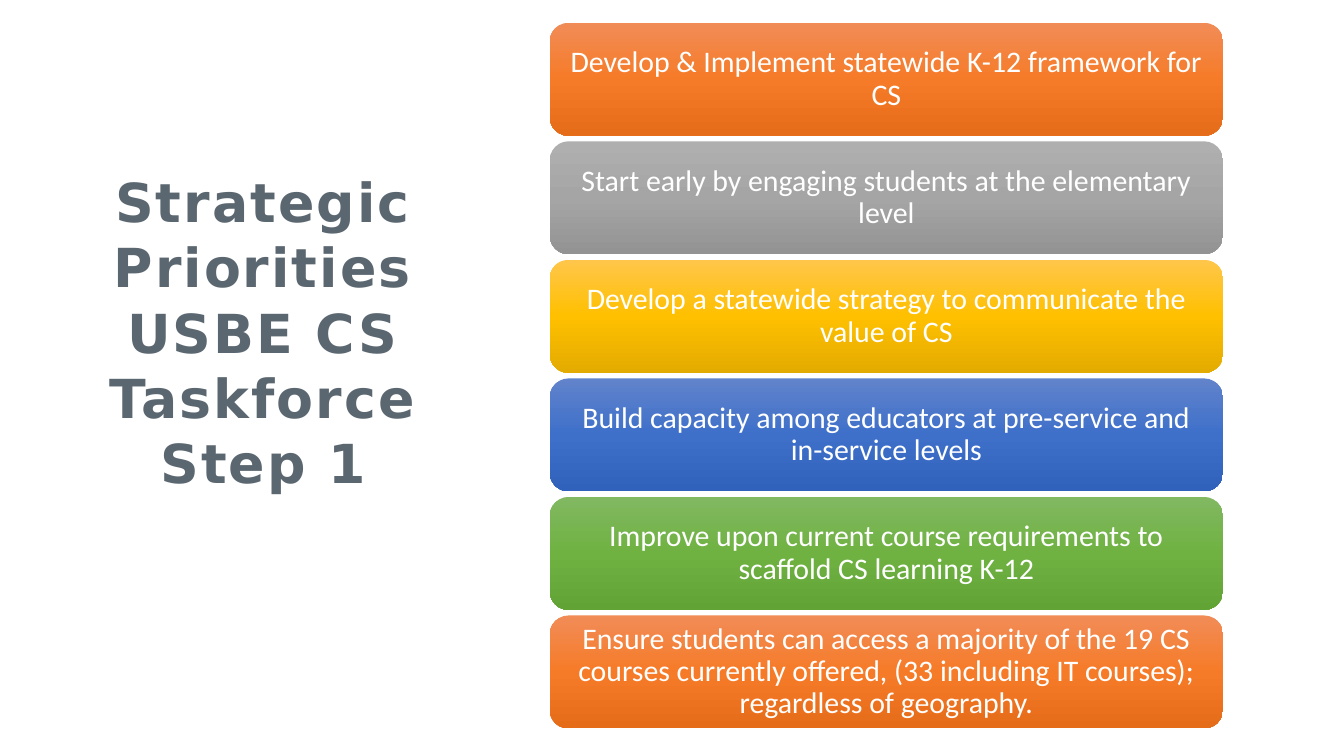
from copy import deepcopy
from pptx import Presentation, util as u
from pptx.dml.color import RGBColor
from pptx.enum import shapes, text
from pptx.oxml.ns import qn

WIDE = 10
HIGH = WIDE * 9 / 16
LEFT, TOP, LAST, WIDTH, HEIGHT = 4.09, 0.17, 4.58, 5.01, 0.84
INK = {"title": "5B6770", "text": "FFFFFF"}
RAMP = {
    "orange": ("F18C57", "F67B28", "E56C19"),
    "gray": ("AFAFAF", "A5A5A5", "939393"),
    "gold": ("FFC64B", "FFC000", "E3AB00"),
    "blue": ("6183CB", "3E70CA", "3062BB"),
    "green": ("81B861", "6FB242", "62A336"),
}
GOALS = [
    ("orange", "Develop & Implement statewide K-12 framework for CS"),
    ("gray", "Start early by engaging students at the elementary level"),
    ("gold", "Develop a statewide strategy to communicate the value of CS"),
    ("blue", "Build capacity among educators at pre-service and in-service levels"),
    ("green", "Improve upon current course requirements to scaffold CS learning K-12"),
    ("orange", "Ensure students can access a majority of the 19 CS courses currently "
               "offered, (33 including IT courses); regardless of geography."),
]
PITCH = (LAST - TOP) / (len(GOALS) - 1)


def style(para, face, size, color, bold=False):
    para.alignment = text.PP_ALIGN.CENTER
    for run in para.runs:
        font = run.font
        font.name, font.size, font.bold = face, u.Pt(size), bold
        font.color.rgb = RGBColor.from_string(color)


def shade(shape, ramp):
    fill = shape.fill
    fill.gradient()
    fill.gradient_angle = 270
    stops = next(shape._element.spPr.iter(qn("a:gsLst")))
    stops.insert(1, deepcopy(stops[0]))
    for stop, color, place in zip(fill.gradient_stops, ramp, (0, 0.5, 1)):
        stop.color.rgb = RGBColor.from_string(color)
        stop.position = place


def head(slide):
    title = slide.shapes.title
    title.left, title.top = u.Inches(0.25), u.Inches(1.4)
    title.width, title.height = u.Inches(3.42), u.Inches(2.33)
    frame = title.text_frame
    frame.text = "Strategic Priorities USBE CS Taskforce\vStep 1"
    frame.word_wrap = True
    frame.auto_size = text.MSO_AUTO_SIZE.NONE
    frame.vertical_anchor = text.MSO_ANCHOR.BOTTOM
    para = frame.paragraphs[0]
    para.line_spacing = u.Pt(35)
    style(para, "DejaVu Sans", 28.8, INK["title"], True)
    for run in para.runs:
        run.font._element.set("spc", "110")


def goal(slide, row, hue, words):
    card = slide.shapes.add_shape(
        shapes.MSO_SHAPE.ROUNDED_RECTANGLE, u.Inches(LEFT),
        u.Inches(TOP + row * PITCH), u.Inches(WIDTH), u.Inches(HEIGHT))
    card.shadow.inherit = False
    card.line.fill.background()
    shade(card, RAMP[hue])
    frame = card.text_frame
    frame.text = words
    frame.word_wrap = True
    frame.vertical_anchor = text.MSO_ANCHOR.MIDDLE
    frame.margin_left = frame.margin_right = u.Inches(0.07)
    frame.margin_top = frame.margin_bottom = u.Inches(0.03)
    para = frame.paragraphs[0]
    para.line_spacing = 0.9
    style(para, "Calibri", 16, INK["text"])


def main():
    deck = Presentation()
    deck.slide_width, deck.slide_height = u.Inches(WIDE), u.Inches(HIGH)
    slide = deck.slides.add_slide(deck.slide_layouts[5])
    head(slide)
    for row, (hue, words) in enumerate(GOALS):
        goal(slide, row, hue, words)
    deck.save("out.pptx")


if __name__ == "__main__":
    main()
